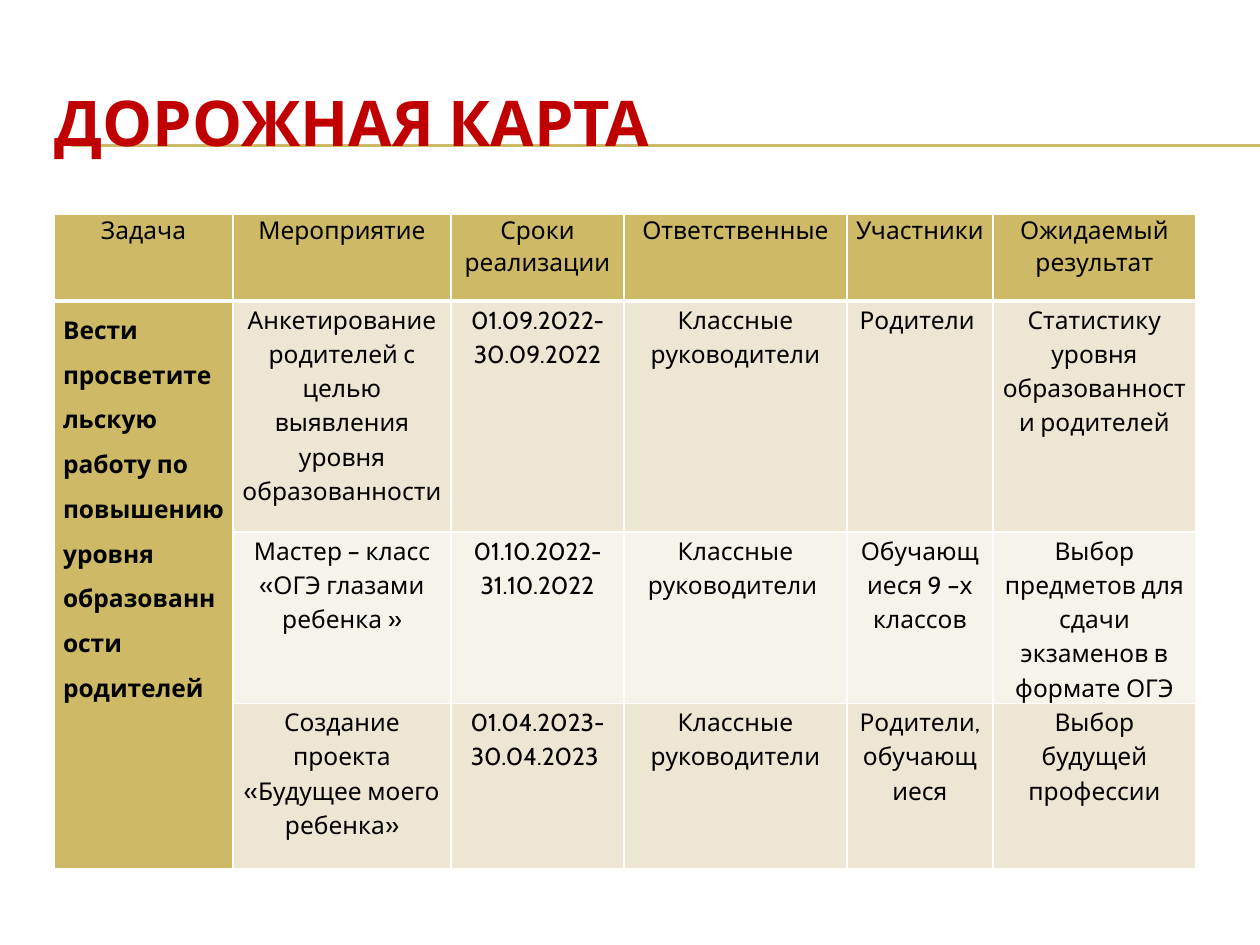
from lxml.etree import SubElement
from pptx import Presentation
from pptx.dml.color import RGBColor
from pptx.enum.shapes import MSO_CONNECTOR
from pptx.enum.text import MSO_ANCHOR, PP_ALIGN
from pptx.oxml import parse_xml
from pptx.oxml.ns import nsdecls, qn
from pptx.util import Emu, Pt

TITLE = "ДОРОЖНАЯ КАРТА"
HEADINGS = ["Задача", "Мероприятие", "Сроки реализации", "Ответственные",
            "Участники", "Ожидаемый результат"]
TASK = "Вести просветительскую работу по повышению уровня образованности родителей"
EVENTS = [
    ["Анкетирование родителей с целью выявления уровня образованности",
     "01.09.2022-30.09.2022", "Классные руководители", "Родители ",
     "Статистику уровня образованности родителей"],
    ["Мастер – класс «ОГЭ глазами ребенка »",
     "01.10.2022-31.10.2022", "Классные руководители ", "Обучающиеся 9 –х классов",
     "Выбор предметов для сдачи экзаменов в формате ОГЭ"],
    ["Создание проекта «Будущее моего ребенка»",
     "01.04.2023-30.04.2023 ", "Классные руководители", "Родители, обучающиеся",
     "Выбор будущей профессии"],
]

FONT = "Cabin"
GOLD, RED, BLACK, WHITE = "CEB966", "C00000", "000000", "FFFFFF"
BANDS = ["EDE6D3", "F6F3EA"]
SLIDE_SIZE = (1260, 945)
TITLE_BOX = (42, 63, 1197, 116)
RULE_LEFT, RULE_YS = 71, (145, 146)
TABLE_LEFT, TABLE_TOP = 54, 214
COLUMN_WIDTHS = [179, 218, 173, 223, 146, 203]
ROW_HEIGHTS = [87, 231, 122, 165]
CELL_MARGIN = 9


def px(n):
    return Emu(round(n * 914400 / 126))


def rgb(color):
    return RGBColor.from_string(color)


def add_run(paragraph, text, size, color, bold=False):
    run = paragraph.add_run()
    run.text = text
    font = run.font
    font.name, font.size, font.bold = FONT, Pt(size), bold
    font.color.rgb = rgb(color)


def set_borders(cell, bottom):
    """Draw white edges, 1 pt wide but for the given bottom width."""
    props = cell._tc.get_or_add_tcPr()
    widths = {"lnL": 1, "lnR": 1, "lnT": 1, "lnB": bottom}
    for place, (edge, width) in enumerate(widths.items()):
        props.insert(place, parse_xml(
            f'<a:{edge} {nsdecls("a")} w="{Pt(width)}"><a:solidFill>'
            f'<a:srgbClr val="{WHITE}"/></a:solidFill></a:{edge}>'))


def format_cell(cell, fill, bottom=1):
    cell.margin_left = cell.margin_right = px(CELL_MARGIN)
    cell.margin_top = cell.margin_bottom = 0
    cell.fill.solid()
    cell.fill.fore_color.rgb = rgb(fill)
    set_borders(cell, bottom)


def write_cell(cell, text, spacing, align=PP_ALIGN.CENTER, bold=False):
    paragraph = cell.text_frame.paragraphs[0]
    paragraph.alignment, paragraph.line_spacing = align, spacing
    add_run(paragraph, text, 14, BLACK, bold)


def add_rules(slide):
    for y in RULE_YS:
        rule = slide.shapes.add_connector(
            MSO_CONNECTOR.STRAIGHT, px(RULE_LEFT), px(y), px(SLIDE_SIZE[0]), px(y))
        rule.line.color.rgb = rgb(GOLD)
        rule.line.width = Pt(0.75)
        SubElement(rule._element.spPr, qn("a:effectLst"))


def add_title(slide):
    title = slide.shapes.title
    title.left, title.top, title.width, title.height = map(px, TITLE_BOX)
    title.text_frame.vertical_anchor = MSO_ANCHOR.MIDDLE
    paragraph = title.text_frame.paragraphs[0]
    paragraph.alignment = PP_ALIGN.LEFT
    add_run(paragraph, TITLE, 36, RED, bold=True)
    # The rules lie behind the title.
    slide.shapes._spTree.append(title._element)


def add_roadmap(slide):
    table = slide.shapes.add_table(
        len(ROW_HEIGHTS), len(COLUMN_WIDTHS), px(TABLE_LEFT), px(TABLE_TOP),
        px(sum(COLUMN_WIDTHS)), px(sum(ROW_HEIGHTS))).table
    for column, width in zip(table.columns, COLUMN_WIDTHS):
        column.width = px(width)
    for row, height in zip(table.rows, ROW_HEIGHTS):
        row.height = px(height)

    for c, heading in enumerate(HEADINGS):
        format_cell(table.cell(0, c), GOLD, bottom=3)
        write_cell(table.cell(0, c), heading, 1.07)
    for r, event in enumerate(EVENTS, 1):
        format_cell(table.cell(r, 0), GOLD)
        for c, text in enumerate(event, 1):
            format_cell(table.cell(r, c), BANDS[(r - 1) % 2])
            write_cell(table.cell(r, c), text, 1.15)
    task = table.cell(1, 0)
    task.merge(table.cell(len(EVENTS), 0))
    write_cell(task, TASK, 1.5, PP_ALIGN.LEFT, bold=True)


def main():
    prs = Presentation()
    prs.slide_width, prs.slide_height = map(px, SLIDE_SIZE)
    slide = prs.slides.add_slide(prs.slide_layouts.get_by_name("Title Only"))
    add_rules(slide)
    add_title(slide)
    add_roadmap(slide)
    prs.save("out.pptx")


if __name__ == "__main__":
    main()
